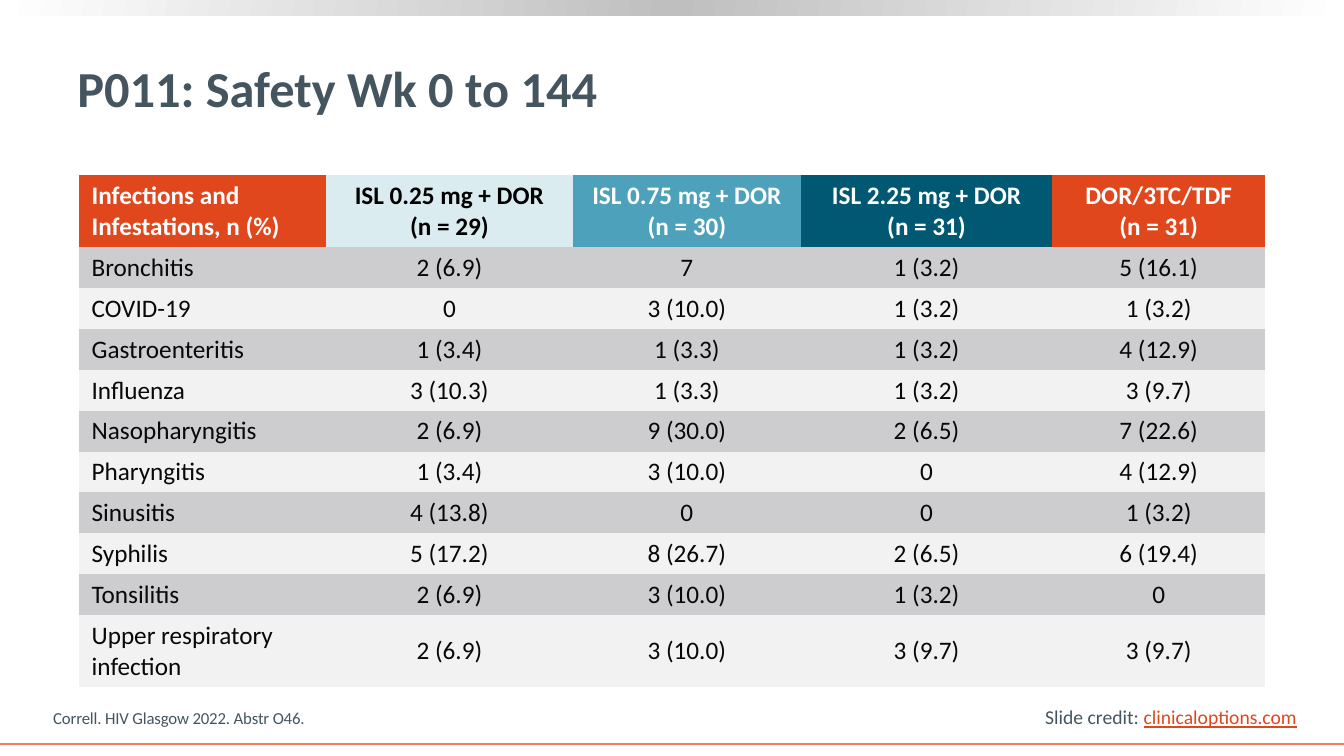
from dataclasses import dataclass, replace

from pptx import Presentation
from pptx.dml.color import RGBColor as Rgb
from pptx.enum.shapes import MSO_CONNECTOR as Connector, MSO_SHAPE as Shape
from pptx.enum.text import MSO_ANCHOR as Anchor, MSO_AUTO_SIZE as AutoSize, PP_ALIGN as Align
from pptx.oxml import parse_xml
from pptx.oxml.ns import nsdecls, qn
from pptx.oxml.xmlchemy import OxmlElement
from pptx.slide import Slide
from pptx.util import Cm, Pt


@dataclass(frozen=True)
class Theme:
    font: str = "Calibri"
    slate: str = "455560"
    orange: str = "E1471D"
    footer_rule: str = "F47D55"
    white: str = "FFFFFF"
    black: str = "000000"
    ink: str = "07080A"
    pale_blue: str = "DBECF1"
    mid_blue: str = "4DA1BB"
    deep_blue: str = "015873"
    band_dark: str = "CDCDCF"
    band_light: str = "F2F2F2"
    bar_middle: str = "BFBFBF"
    title_size: int = 36
    table_size: int = 18
    credit_size: int = 14
    citation_size: int = 12


THEME = Theme()


@dataclass(frozen=True)
class Span:
    text: str
    size: int
    color: str = THEME.slate
    bold: bool = False
    underline: bool = False
    spacing: int = 0  # hundredths of a point


@dataclass(frozen=True)
class TextBox:
    left: float
    top: float
    width: float
    height: float
    spans: tuple[Span, ...]
    anchor: Anchor = Anchor.TOP
    wrap: bool = True
    auto_size: AutoSize = AutoSize.NONE


@dataclass(frozen=True)
class Column:
    heading: str
    width: float
    fill: str
    color: str = THEME.white
    align: Align = Align.CENTER


TITLE = TextBox(
    1.7, 0.66, 30.2, 3.07,
    (Span("P011: Safety Wk 0 to 144", THEME.title_size, bold=True),),
    anchor=Anchor.MIDDLE)
CREDIT = TextBox(
    26.09, 17.65, 6.91, 0.86,
    (Span("Slide credit: ", THEME.credit_size),
     Span("clinicaloptions.com", THEME.credit_size, THEME.orange, underline=True)),
    wrap=False, auto_size=AutoSize.SHAPE_TO_FIT_TEXT)
CITATION = TextBox(
    1.09, 17.7, 21.82, 0.76,
    (Span("Correll. HIV Glasgow 2022. Abstr O46.", THEME.citation_size, spacing=-10),),
    anchor=Anchor.BOTTOM, auto_size=AutoSize.SHAPE_TO_FIT_TEXT)

COLUMNS = (
    Column("Infections and Infestations, n (%)", 6.23, THEME.orange, align=Align.LEFT),
    Column("ISL 0.25 mg + DOR\n(n = 29)", 6.23, THEME.pale_blue, THEME.black),
    Column("ISL 0.75 mg + DOR\n(n = 30)", 5.74, THEME.mid_blue),
    Column("ISL 2.25 mg + DOR\n(n = 31)", 6.34, THEME.deep_blue),
    Column("DOR/3TC/TDF\n(n = 31)", 5.36, THEME.orange),
)

INFECTIONS = (
    ("Bronchitis", "2 (6.9)", "7", "1 (3.2)", "5 (16.1)"),
    ("COVID-19", "0", "3 (10.0)", "1 (3.2)", "1 (3.2)"),
    ("Gastroenteritis", "1 (3.4)", "1 (3.3)", "1 (3.2)", "4 (12.9)"),
    ("Influenza", "3 (10.3)", "1 (3.3)", "1 (3.2)", "3 (9.7)"),
    ("Nasopharyngitis", "2 (6.9)", "9 (30.0)", "2 (6.5)", "7 (22.6)"),
    ("Pharyngitis", "1 (3.4)", "3 (10.0)", "0", "4 (12.9)"),
    ("Sinusitis", "4 (13.8)", "0", "0", "1 (3.2)"),
    ("Syphilis", "5 (17.2)", "8 (26.7)", "2 (6.5)", "6 (19.4)"),
    ("Tonsilitis", "2 (6.9)", "3 (10.0)", "1 (3.2)", "0"),
    ("Upper respiratory infection", "2 (6.9)", "3 (10.0)", "3 (9.7)", "3 (9.7)"),
)

SLIDE_WIDTH, SLIDE_HEIGHT = Cm(33.87), Cm(19.05)
TABLE_LEFT, TABLE_TOP = Cm(1.98), Cm(4.42)
ONE_LINE, TWO_LINES = Cm(1.03), Cm(1.81)
PLAIN_TABLE_STYLE = "{2D5ABB26-0587-4C30-8999-92F81FD0307C}"


def apply_format(target: object, values: dict) -> None:
    for name, value in values.items():
        setattr(target, name, value)


def write_span(para: object, span: Span) -> None:
    run = para.add_run()
    run.text = span.text
    apply_format(run.font, {"name": THEME.font, "size": Pt(span.size),
                            "bold": span.bold, "underline": span.underline})
    run.font.color.rgb = Rgb.from_string(span.color)
    if span.spacing:
        run.font._element.set("spc", str(span.spacing))


def draw_text(slide: Slide, item: TextBox) -> None:
    box = slide.shapes.add_textbox(Cm(item.left), Cm(item.top), Cm(item.width), Cm(item.height))
    apply_format(box.text_frame, {"word_wrap": item.wrap, "vertical_anchor": item.anchor,
                                  "auto_size": item.auto_size})
    for span in item.spans:
        write_span(box.text_frame.paragraphs[0], span)


def draw_top_bar(slide: Slide) -> None:
    bar = slide.shapes.add_shape(Shape.RECTANGLE, 0, 0, SLIDE_WIDTH, Cm(0.4))
    bar.shadow.inherit = False
    bar.line.fill.background()
    stops = ((0, THEME.white), (50, THEME.bar_middle), (100, THEME.white))
    stop_xml = "".join(f'<a:gs pos="{percent * 1000}"><a:srgbClr val="{color}"/></a:gs>'
                       for percent, color in stops)
    gradient = parse_xml(f'<a:gradFill {nsdecls("a")}><a:gsLst>{stop_xml}</a:gsLst>'
                         '<a:lin ang="11400000" scaled="0"/></a:gradFill>')
    bar._element.spPr.find(qn("a:prstGeom")).addnext(gradient)


def draw_footer_rule(slide: Slide) -> None:
    height = Cm(18.74)
    rule = slide.shapes.add_connector(Connector.STRAIGHT, 0, height, SLIDE_WIDTH, height)
    rule.line.color.rgb = Rgb.from_string(THEME.footer_rule)
    rule.line.width = Pt(1.5)
    rule._element.spPr.append(OxmlElement("a:effectLst"))


def fill_cell(cell: object, span: Span, fill: str, align: Align) -> None:
    apply_format(cell, {"margin_left": Cm(0.33), "margin_right": Cm(0.33),
                        "margin_top": Cm(0.13), "margin_bottom": Cm(0.13),
                        "vertical_anchor": Anchor.MIDDLE})
    cell.fill.solid()
    cell.fill.fore_color.rgb = Rgb.from_string(fill)
    para = cell.text_frame.paragraphs[0]
    para.alignment = align
    for number, line in enumerate(span.text.split("\n")):
        if number:
            para.add_line_break()
        write_span(para, replace(span, text=line))


def draw_table(slide: Slide) -> None:
    heights = [TWO_LINES] + [ONE_LINE] * (len(INFECTIONS) - 1) + [TWO_LINES]
    frame = slide.shapes.add_table(len(heights), len(COLUMNS), TABLE_LEFT, TABLE_TOP,
                                   sum(Cm(column.width) for column in COLUMNS), sum(heights))
    table = frame.table
    next(frame._element.iter(qn("a:tableStyleId"))).text = PLAIN_TABLE_STYLE
    for row, height in zip(table.rows, heights):
        row.height = height
    for index, column in enumerate(COLUMNS):
        table.columns[index].width = Cm(column.width)
        heading = Span(column.heading, THEME.table_size, column.color, bold=True)
        fill_cell(table.cell(0, index), heading, column.fill, column.align)
        for number, infection in enumerate(INFECTIONS, start=1):
            band = THEME.band_dark if number % 2 else THEME.band_light
            value = Span(infection[index], THEME.table_size, THEME.ink)
            fill_cell(table.cell(number, index), value, band, column.align)


def main() -> None:
    deck = Presentation()
    apply_format(deck, {"slide_width": SLIDE_WIDTH, "slide_height": SLIDE_HEIGHT})
    slide = deck.slides.add_slide(deck.slide_layouts[6])

    # Frame of the slide
    draw_top_bar(slide)
    draw_footer_rule(slide)

    # Credit and title
    draw_text(slide, CREDIT)
    draw_text(slide, TITLE)

    # Safety results and their citation
    draw_table(slide)
    draw_text(slide, CITATION)
    deck.save("out.pptx")


if __name__ == "__main__":
    main()
